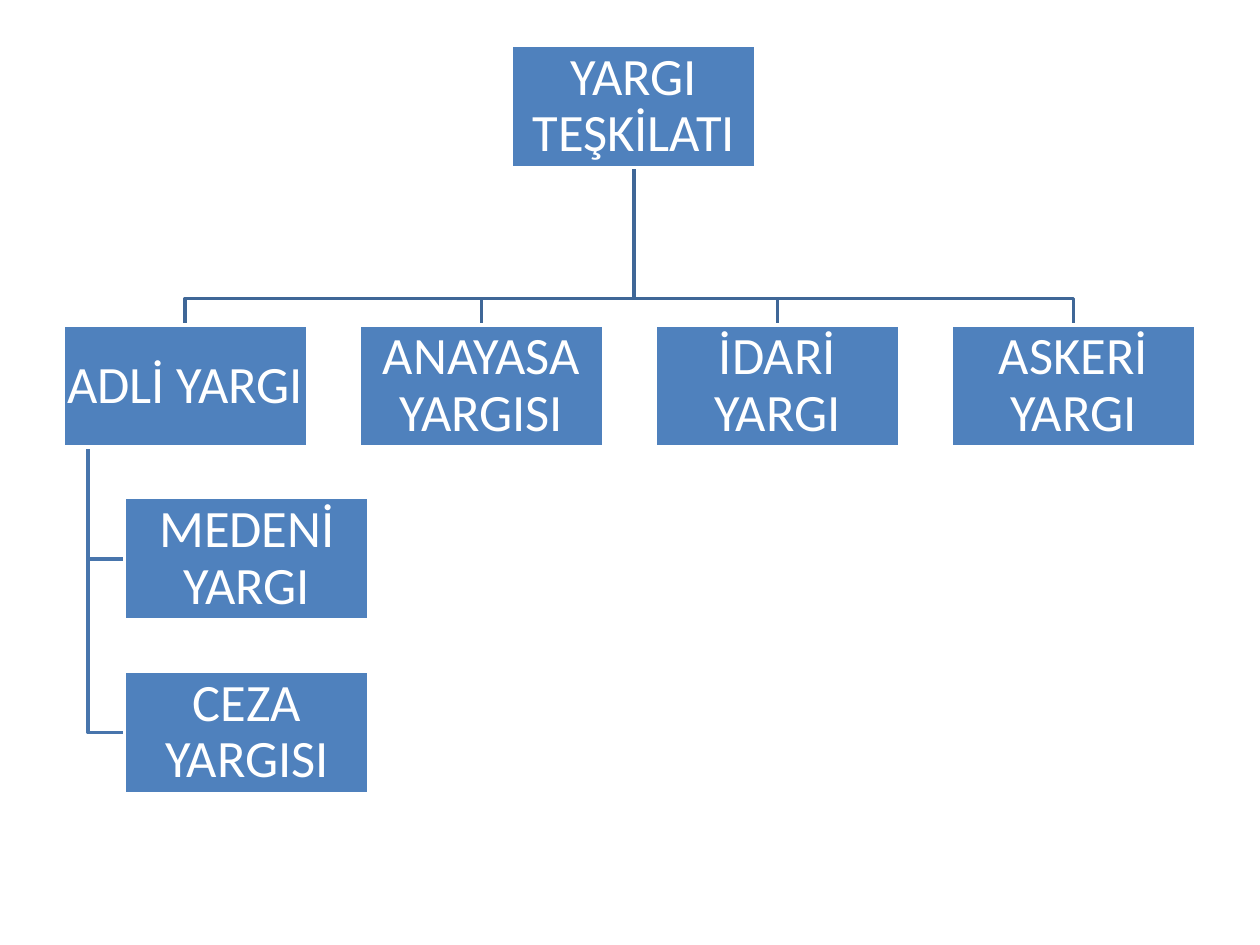
from pptx import Presentation
from pptx.dml.color import RGBColor
from pptx.enum.shapes import MSO_SHAPE as Shape
from pptx.enum.text import MSO_ANCHOR as Anchor, PP_ALIGN as Align
from pptx.util import Inches, Pt

BOX_WIDTH, BOX_HEIGHT = 1.94, 0.97
ROOT_LEFT, ROOT_TOP = 4.06, 0.36
COURT_LEFT, COURT_TOP, COURT_STEP = 0.5, 2.58, 2.35
BRANCH_LEFT, BRANCH_TOP, BRANCH_STEP = 0.99, 3.95, 1.38
BUS_Y, STEM_X = 2.37, 0.7

COURTS = ["ADLİ YARGI", "ANAYASA YARGISI", "İDARİ YARGI", "ASKERİ YARGI"]
BRANCHES = ["MEDENİ YARGI", "CEZA YARGISI"]


def color(value):
    return RGBColor.from_string(value)


class OrgChart:
    font = "Calibri"
    font_size = Pt(30)
    line_width = Pt(2)
    inset = Inches(0.02)
    fill = "4F81BD"
    light = "FFFFFF"

    def __init__(self, slide):
        self.slide = slide

    def set_line(self, shape, line_color):
        shape.shadow.inherit = False
        shape.line.color.rgb = color(line_color)
        shape.line.width = self.line_width

    def add_link(self, points, line_color):
        start, *rest = [(Inches(x), Inches(y)) for x, y in points]
        builder = self.slide.shapes.build_freeform(*start)
        builder.add_line_segments(rest, close=False)
        shape = builder.convert_to_shape()
        shape.fill.background()
        self.set_line(shape, line_color)

    def add_box(self, text, left, top):
        shape = self.slide.shapes.add_shape(
            Shape.RECTANGLE, Inches(left), Inches(top), Inches(BOX_WIDTH), Inches(BOX_HEIGHT)
        )
        shape.fill.solid()
        shape.fill.fore_color.rgb = color(self.fill)
        self.set_line(shape, self.light)
        frame = shape.text_frame
        frame.text = text
        frame.word_wrap = True
        frame.vertical_anchor = Anchor.MIDDLE
        frame.margin_left = frame.margin_right = self.inset
        frame.margin_top = frame.margin_bottom = self.inset
        paragraph = frame.paragraphs[0]
        paragraph.alignment = Align.CENTER
        paragraph.line_spacing = 0.9
        font = paragraph.runs[0].font
        font.name = self.font
        font.size = self.font_size
        font.color.rgb = color(self.light)


def main():
    presentation = Presentation()
    presentation.slide_width, presentation.slide_height = Inches(10), Inches(7.5)
    chart = OrgChart(presentation.slides.add_slide(presentation.slide_layouts[6]))

    courts = [(name, COURT_LEFT + i * COURT_STEP) for i, name in enumerate(COURTS)]
    branches = [(name, BRANCH_TOP + i * BRANCH_STEP) for i, name in enumerate(BRANCHES)]

    root_x, root_bottom = ROOT_LEFT + BOX_WIDTH / 2, ROOT_TOP + BOX_HEIGHT
    for name, left in courts:
        x = left + BOX_WIDTH / 2
        chart.add_link(
            [(root_x, root_bottom), (root_x, BUS_Y), (x, BUS_Y), (x, COURT_TOP)], "3F6797"
        )
    for name, top in branches:
        y = top + BOX_HEIGHT / 2
        chart.add_link(
            [(STEM_X, COURT_TOP + BOX_HEIGHT), (STEM_X, y), (BRANCH_LEFT, y)], "4875AC"
        )

    chart.add_box("YARGI TEŞKİLATI", ROOT_LEFT, ROOT_TOP)
    for name, left in courts:
        chart.add_box(name, left, COURT_TOP)
    for name, top in branches:
        chart.add_box(name, BRANCH_LEFT, top)

    presentation.save("out.pptx")


if __name__ == "__main__":
    main()
